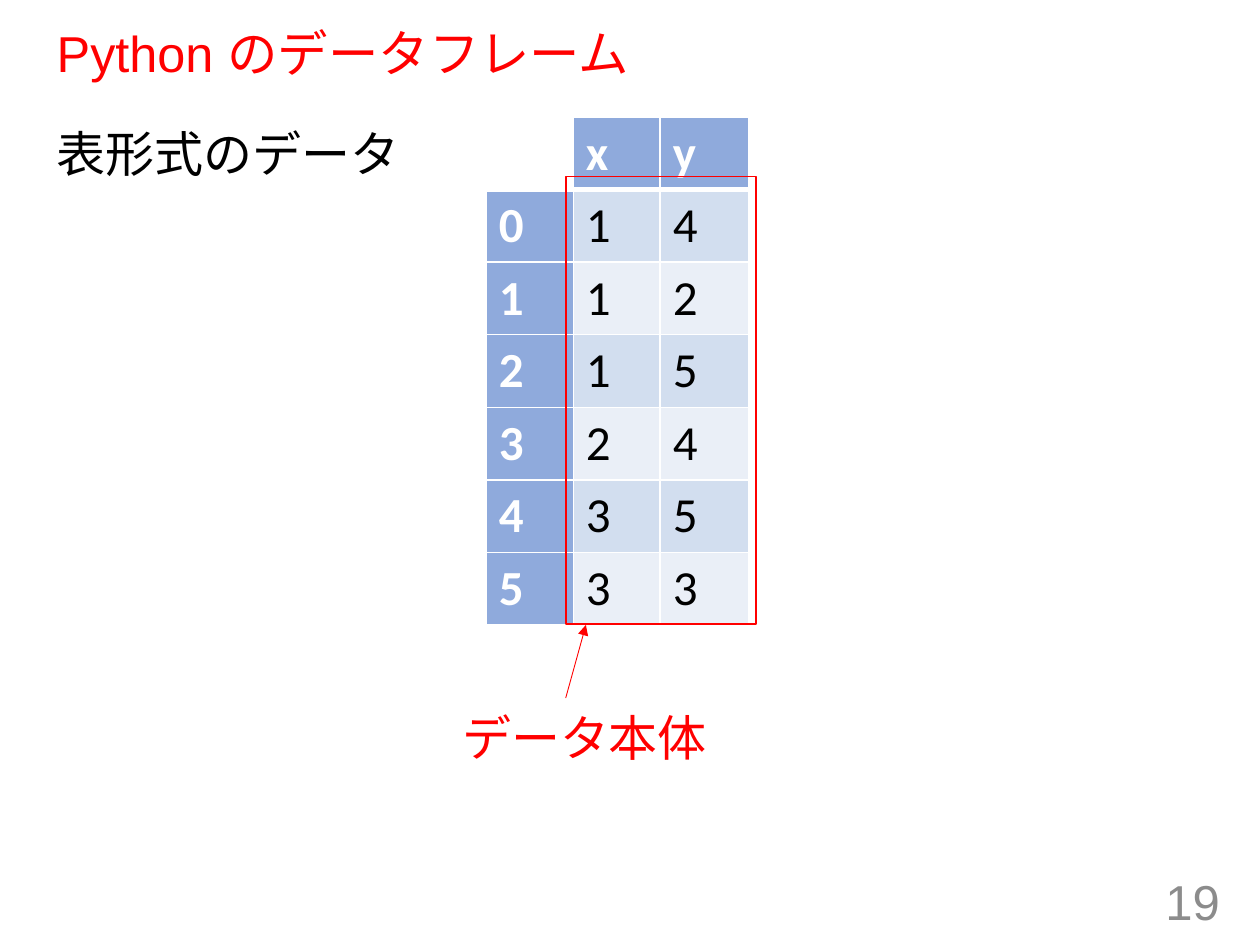
"""Build a slide that shows the data body of a Python data frame."""
from dataclasses import dataclass

from lxml import etree
from pptx import Presentation
from pptx.dml.color import RGBColor
from pptx.enum.shapes import MSO_CONNECTOR, MSO_SHAPE
from pptx.enum.text import MSO_ANCHOR, MSO_AUTO_SIZE, PP_ALIGN
from pptx.oxml.ns import qn
from pptx.util import Inches, Pt

LEFT, RIGHT = PP_ALIGN.LEFT, PP_ALIGN.RIGHT
TOP, MIDDLE = MSO_ANCHOR.TOP, MSO_ANCHOR.MIDDLE
NO_FIT = MSO_AUTO_SIZE.NONE
STRAIGHT = MSO_CONNECTOR.STRAIGHT
RECTANGLE = MSO_SHAPE.RECTANGLE

RED = RGBColor(0xFF, 0x00, 0x00)
BLACK = RGBColor(0x00, 0x00, 0x00)
WHITE = RGBColor(0xFF, 0xFF, 0xFF)
GRAY = RGBColor(0x8C, 0x8C, 0x8C)
HEADER_BLUE = RGBColor(0x8F, 0xAA, 0xDC)
BANDS = (RGBColor(0xEA, 0xEF, 0xF7), RGBColor(0xD2, 0xDE, 0xEF))

HEADINGS = ("", "x", "y")
RECORDS = ((1, 4), (1, 2), (1, 5), (2, 4), (3, 5), (3, 3))
COLUMN_WIDTHS = (0.69, 0.69, 0.7)
ROW_HEIGHT = 0.57


@dataclass
class Caption:
    text: str
    box: tuple[float, float, float, float]
    color: RGBColor
    font: str = "Arial"
    size: float = 28
    align: PP_ALIGN = LEFT
    anchor: MSO_ANCHOR = TOP
    wrap: bool = True


def format_run(run, **values) -> None:
    """Apply font values and a colour to a run."""
    run.font.color.rgb = values.pop("color")
    for name, value in values.items():
        setattr(run.font, name, value)


def write_caption(shape, caption: Caption) -> None:
    """Place a text shape and fill it with its caption."""
    for name, value in zip(("left", "top", "width", "height"), caption.box):
        setattr(shape, name, Inches(value))
    frame = shape.text_frame
    settings = {"auto_size": NO_FIT, "word_wrap": caption.wrap,
                "vertical_anchor": caption.anchor}
    for name, value in settings.items():
        setattr(frame, name, value)
    paragraph = frame.paragraphs[0]
    paragraph.alignment = caption.align
    run = paragraph.add_run()
    run.text = caption.text
    format_run(run, name=caption.font, size=Pt(caption.size), color=caption.color)


def add_borders(cell, bottom: float) -> None:
    """Give a cell white borders with its own bottom width."""
    properties = cell._tc.get_or_add_tcPr()
    for side, width in {"L": 1, "R": 1, "T": 1, "B": bottom}.items():
        line = etree.SubElement(properties, qn(f"a:ln{side}"), w=str(Pt(width)))
        fill = etree.SubElement(line, qn("a:solidFill"))
        etree.SubElement(fill, qn("a:srgbClr"), val=str(WHITE))


def fill_cell(cell, text: str, row: int, column: int) -> None:
    """Style one cell as a corner, a heading or a value."""
    heading = row == 0 or column == 0
    add_borders(cell, 3 if row == 0 else 1)
    cell.fill.solid()
    if heading:
        cell.fill.fore_color.rgb = HEADER_BLUE if text else WHITE
    else:
        cell.fill.fore_color.rgb = BANDS[row % 2]
    if text:
        run = cell.text_frame.paragraphs[0].add_run()
        run.text = text
        format_run(run, name="Calibri", size=Pt(28), bold=heading,
                   color=WHITE if heading else BLACK)


def add_data_frame(slide) -> None:
    """Draw the data frame with its index and column names."""
    rows = [HEADINGS, *((index, *record) for index, record in enumerate(RECORDS))]
    table = slide.shapes.add_table(
        len(rows), len(HEADINGS), Inches(3.86), Inches(0.93),
        Inches(sum(COLUMN_WIDTHS)), Inches(ROW_HEIGHT * len(rows))).table
    for column, width in zip(table.columns, COLUMN_WIDTHS):
        column.width = Inches(width)
    for row, values in enumerate(rows):
        table.rows[row].height = Inches(ROW_HEIGHT)
        for column, value in enumerate(values):
            fill_cell(table.cell(row, column), str(value), row, column)


def add_body_marker(slide) -> None:
    """Frame the values and point an arrow at the frame."""
    outline = slide.shapes.add_shape(
        RECTANGLE, Inches(4.49), Inches(1.4), Inches(1.51), Inches(3.55))
    outline.shadow.inherit = False
    outline.fill.background()
    arrow = slide.shapes.add_connector(
        STRAIGHT, Inches(4.49), Inches(5.54), Inches(4.65), Inches(4.96))
    for shape, width in ((outline, 1), (arrow, 0.5)):
        shape.line.color.rgb = RED
        shape.line.width = Pt(width)
    etree.SubElement(arrow.line._get_or_add_ln(), qn("a:tailEnd"), type="triangle")
    etree.SubElement(arrow._element.spPr, qn("a:effectLst"))


def main() -> None:
    """Build and save the slide."""
    deck = Presentation()
    deck.slide_width, deck.slide_height = Inches(10), Inches(7.5)
    slide = deck.slides.add_slide(deck.slide_layouts[5])
    title = slide.shapes.title
    write_caption(title, Caption("Python のデータフレーム", (0.35, 0.19, 9.25, 0.51),
                                 RED, size=28.8, anchor=MIDDLE))
    title.text_frame.paragraphs[0].line_spacing = 0.9
    captions = (
        Caption("表形式のデータ", (0.35, 0.93, 9.25, 5.83), BLACK),
        Caption("19", (7.53, 6.95, 2.25, 0.4), GRAY, align=RIGHT, anchor=MIDDLE),
        Caption("データ本体", (3.57, 5.57, 2.17, 0.57), RED, font="Calibri", wrap=False),
    )
    for caption in captions:
        write_caption(slide.shapes.add_textbox(0, 0, 0, 0), caption)
    add_data_frame(slide)
    add_body_marker(slide)
    deck.save("out.pptx")


if __name__ == "__main__":
    main()
